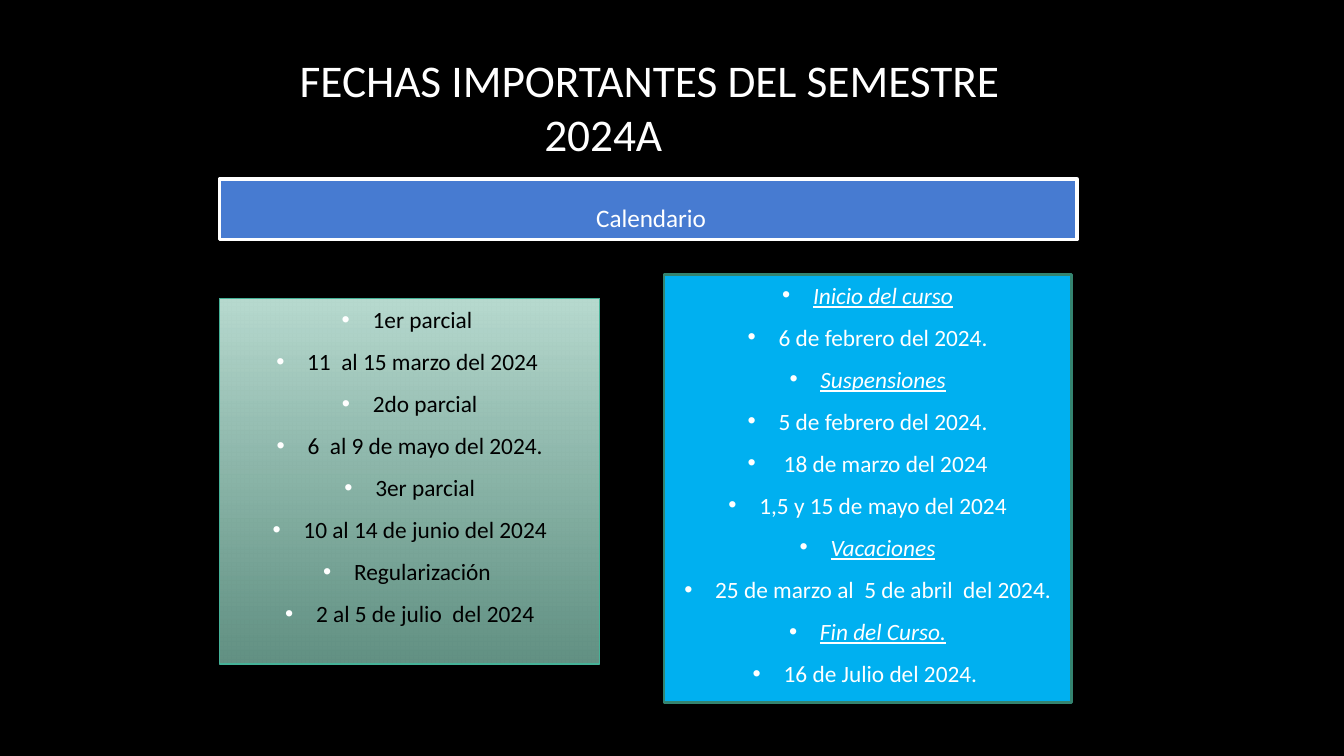
from lxml.etree import SubElement
from pptx import Presentation
from pptx.dml.color import RGBColor
from pptx.enum.text import MSO_ANCHOR, MSO_AUTO_SIZE, PP_ALIGN
from pptx.oxml.ns import qn
from pptx.util import Inches, Pt

BLACK = RGBColor(0x00, 0x00, 0x00)
WHITE = RGBColor(0xFF, 0xFF, 0xFF)
BLUE = RGBColor(0x47, 0x7B, 0xD1)
SKY = RGBColor(0x00, 0xB0, 0xF0)
MINT = RGBColor(0xB7, 0xDA, 0xCF)
SAGE = RGBColor(0x85, 0xC3, 0xB1)
GREEN = RGBColor(0x46, 0xB2, 0x98)
PINE = RGBColor(0x34, 0x84, 0x70)

CELL = Inches(0.1)  # the slide is a grid of 100 columns by 56.25 rows
COMPARISON_LAYOUT = 4

EXAMS = [
    "1er parcial ", "11  al 15 marzo del 2024 ",
    "2do parcial", "6  al 9 de mayo del 2024.",
    "3er parcial", "10 al 14 de junio del 2024",
    "Regularización ", "2 al 5 de julio  del 2024",
]
COURSE_DATES = {
    "Inicio del curso": ["6 de febrero del 2024."],
    "Suspensiones": ["5 de febrero del 2024.", " 18 de marzo del 2024",
                     "1,5 y 15 de mayo del 2024"],
    "Vacaciones": ["25 de marzo al  5 de abril  del 2024."],
    "Fin del Curso.": ["16 de Julio del 2024. "],
}


class CalendarSlide:
    font = "Calibri"
    title_size, banner_size, list_size = Pt(24.3), Pt(13.5), Pt(12.5)
    space_after = Pt(7.5)
    bullet_indent = Inches(0.23)

    def __init__(self, deck):
        self.slide = deck.slides.add_slide(deck.slide_layouts[COMPARISON_LAYOUT])
        background = self.slide.background.fill
        background.solid()
        background.fore_color.rgb = BLACK

    def place(self, idx, col, row, cols, rows, anchor):
        """Move a template placeholder to grid cells and return it."""
        holder = self.slide.placeholders[idx]
        holder.left, holder.top, holder.width, holder.height = (
            round(CELL * cells) for cells in (col, row, cols, rows))
        holder.shadow.inherit = False
        frame = holder.text_frame
        frame.word_wrap = True
        frame.auto_size = MSO_AUTO_SIZE.NONE
        frame.vertical_anchor = anchor
        return holder

    def outline(self, holder, color, points):
        holder.line.color.rgb = color
        holder.line.width = Pt(points)

    def fill(self, holder, color):
        holder.fill.solid()
        holder.fill.fore_color.rgb = color

    def fade(self, holder, top, bottom, bottom_opacity):
        """Fill from top to bottom, with the last colour partly transparent."""
        holder.fill.gradient()
        holder.fill.gradient_angle = 270
        for stop, color in zip(holder.fill.gradient_stops, (top, bottom)):
            stop.color.rgb = color
        last_color = holder.element.spPr.findall(".//" + qn("a:srgbClr"))[-1]
        SubElement(last_color, qn("a:alpha"), val=str(bottom_opacity * 1000))

    def run(self, paragraph, text, size, color, emphasis=False):
        run = paragraph.add_run()
        run.text = text
        font = run.font
        font.name, font.size, font.bold = self.font, size, False
        font.color.rgb = color
        font.italic = font.underline = emphasis

    def align(self, paragraph, alignment, space_after):
        paragraph.alignment = alignment
        paragraph.line_spacing = 1.0
        paragraph.space_before = Pt(0)
        paragraph.space_after = space_after

    def indent(self, paragraph, hanging):
        properties = paragraph._p.get_or_add_pPr()
        properties.set("marL", str(hanging))
        properties.set("indent", str(-hanging))
        return properties

    def title(self, first_line, second_line, second_line_indent, *cells):
        holder = self.place(0, *cells, MSO_ANCHOR.MIDDLE)
        heading = holder.text_frame.paragraphs[0]
        self.align(heading, PP_ALIGN.LEFT, Pt(0))
        self.indent(heading, second_line_indent)
        self.run(heading, first_line, self.title_size, WHITE)
        heading.add_line_break()
        self.run(heading, second_line, self.title_size, WHITE)

    def banner(self, idx, text, *cells):
        holder = self.place(idx, *cells, MSO_ANCHOR.BOTTOM)
        self.fill(holder, BLUE)
        self.outline(holder, WHITE, 2)
        label = holder.text_frame.paragraphs[0]
        self.align(label, PP_ALIGN.CENTER, self.space_after)
        self.run(label, text, self.banner_size, WHITE)

    def date_list(self, idx, entries, color, *cells):
        """Write (text, emphasis) entries as centred bullets."""
        holder = self.place(idx, *cells, MSO_ANCHOR.TOP)
        frame = holder.text_frame
        for number, (text, emphasis) in enumerate(entries):
            entry = frame.add_paragraph() if number else frame.paragraphs[0]
            self.align(entry, PP_ALIGN.CENTER, self.space_after)
            properties = self.indent(entry, self.bullet_indent)
            bullet_color = SubElement(properties, qn("a:buClr"))
            SubElement(bullet_color, qn("a:srgbClr"), val=str(WHITE))
            SubElement(properties, qn("a:buFont"), typeface="Arial")
            SubElement(properties, qn("a:buChar"), char="•")
            self.run(entry, text, self.list_size, color, emphasis)
        return holder

    def remove_empty(self):
        for holder in list(self.slide.placeholders):
            if not holder.text_frame.text:
                holder.element.getparent().remove(holder.element)


def main():
    deck = Presentation()
    deck.slide_width, deck.slide_height = CELL * 100, round(CELL * 56.25)

    calendar = CalendarSlide(deck)
    calendar.title("FECHAS IMPORTANTES DEL SEMESTRE", "2024A", Inches(1.82),
                   21.3, 3.25, 71.7, 9.3)
    calendar.banner(1, " Calendario", 16.33, 13.33, 63.8, 4.5)

    exams = calendar.date_list(2, [(text, False) for text in EXAMS], BLACK,
                               16.33, 22.2, 28.3, 27.2)
    calendar.fade(exams, MINT, SAGE, 74)
    calendar.outline(exams, GREEN, 0.75)

    entries = [(text, text == heading) for heading, dates in COURSE_DATES.items()
               for text in [heading, *dates]]
    course = calendar.date_list(4, entries, WHITE, 49.4, 20.4, 30.3, 31.9)
    calendar.fill(course, SKY)
    calendar.outline(course, PINE, 1.5)

    calendar.remove_empty()
    deck.save("out.pptx")


if __name__ == "__main__":
    main()
